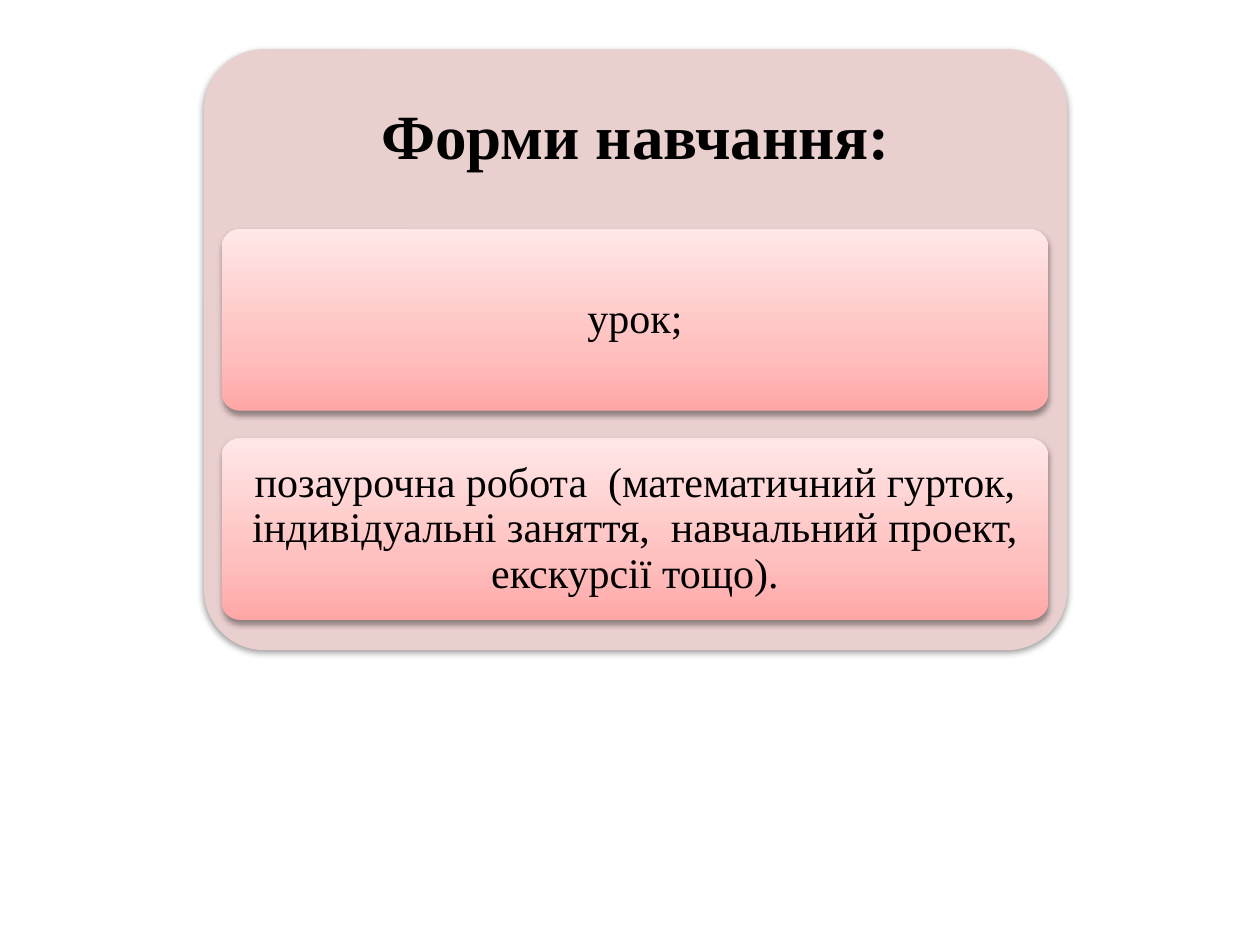
from copy import deepcopy
from lxml.etree import SubElement
from pptx import Presentation
from pptx.dml.color import RGBColor
from pptx.enum.shapes import MSO_SHAPE
from pptx.enum.text import MSO_ANCHOR, MSO_AUTO_SIZE, PP_ALIGN
from pptx.oxml.ns import qn
from pptx.util import Inches, Pt

TITLE = "Форми навчання:"
FORMS = [
    "урок;",
    "позаурочна робота  (математичний гурток, індивідуальні заняття,  "
    "навчальний проект, екскурсії тощо).",
]
PANEL = (1.62, 0.39, 6.85, 4.77)
HEAD = 1.43
CARD = (1.76, 1.82, 6.56, 1.44)
STEP = 1.66
STOPS = [(0, "FFA7A7"), (35, "FFC1C0"), (100, "FFE7E7")]


def paint(color, code):
    color.rgb = RGBColor.from_string(code)


def shade(shape):
    shape.shadow.inherit = False
    effects = shape._element.spPr.find(qn("a:effectLst"))
    glow = SubElement(effects, qn("a:outerShdw"), blurRad=str(Pt(3.5)),
                      dist=str(Pt(2)), dir="5400000", rotWithShape="0")
    tone = SubElement(glow, qn("a:srgbClr"), val="000000")
    SubElement(tone, qn("a:alpha"), val="38000")


def blend(fill):
    fill.gradient()
    fill.gradient_angle = 90
    stops = fill.gradient_stops
    first = stops[0]._gs
    first.addnext(deepcopy(first))
    for stop, (pos, code) in zip(fill.gradient_stops, STOPS):
        stop.position = pos / 100
        paint(stop.color, code)


def add_box(slide, box):
    shape = slide.shapes.add_shape(MSO_SHAPE.ROUNDED_RECTANGLE, *map(Inches, box))
    shape.adjustments[0] = 0.1
    shape.line.fill.background()
    shade(shape)
    return shape


def write(shape, text, size, pad, bold=False):
    frame = shape.text_frame
    frame.text = text
    frame.word_wrap = True
    frame.auto_size = MSO_AUTO_SIZE.NONE
    frame.vertical_anchor = MSO_ANCHOR.MIDDLE
    frame.margin_left = frame.margin_right = Inches(pad[0])
    frame.margin_top = frame.margin_bottom = Inches(pad[1])
    para = frame.paragraphs[0]
    para.alignment = PP_ALIGN.CENTER
    para.line_spacing = 0.9
    para.font.name = "Times New Roman"
    para.font.size = Pt(size)
    para.font.bold = bold
    paint(para.font.color, "000000")


def main():
    deck = Presentation()
    deck.slide_width, deck.slide_height = Inches(10), Inches(7.5)
    slide = deck.slides.add_slide(deck.slide_layouts[5])

    panel = add_box(slide, PANEL)
    panel.fill.solid()
    paint(panel.fill.fore_color, "EACFCF")

    title = slide.shapes.title
    title.left, title.top, title.width, title.height = map(Inches, (*PANEL[:3], HEAD))
    write(title, TITLE, 36, (0.15, 0.15), True)
    panel._element.addnext(title._element)

    left, top, width, height = CARD
    for row, text in enumerate(FORMS):
        card = add_box(slide, (left, top + row * STEP, width, height))
        blend(card.fill)
        write(card, text, 24, (0.07, 0.05))

    deck.save("out.pptx")


if __name__ == "__main__":
    main()
